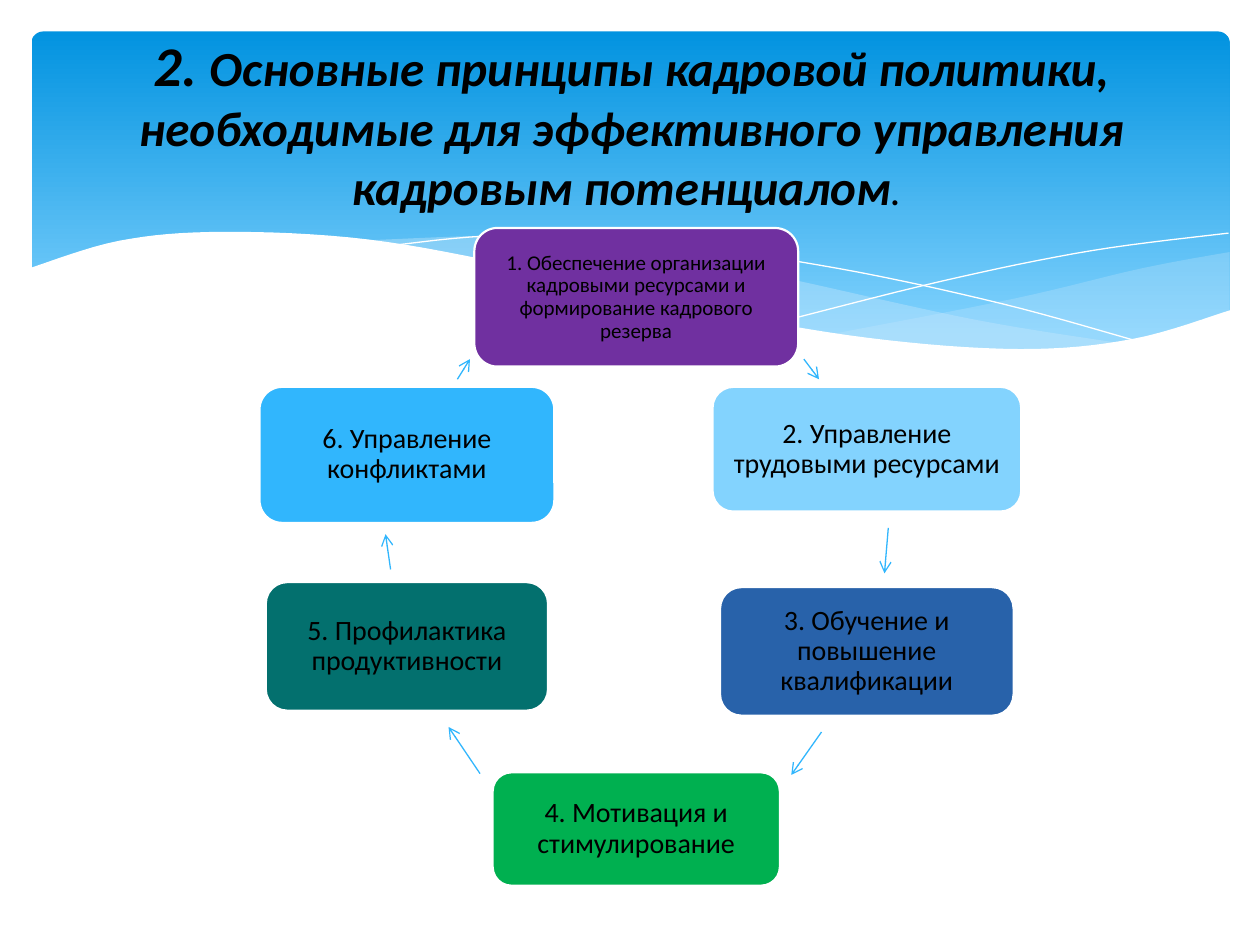
from lxml import etree
from pptx import Presentation
from pptx import util as u
from pptx.dml.color import RGBColor
from pptx.enum import shapes, text
from pptx.oxml.ns import qn

COLORS = {
    "sky_top": "0293E0", "sky_bottom": "83D3FE", "wave": "C6E7FC",
    "white": "FFFFFF", "black": "000000", "arrow": "31B6FD",
    "purple": "7030A0", "light_blue": "83D3FE", "dark_blue": "2862AA",
    "green": "00B050", "teal": "03706E", "blue": "31B6FD",
}
STEPS = 8


def smooth(knots):
    """Return points on a Catmull-Rom curve through the knots."""
    padded = [knots[0], *knots, knots[-1]]
    points = [knots[0]]
    for before, start, end, after in zip(padded, padded[1:], padded[2:], padded[3:]):
        for step in range(1, STEPS + 1):
            t = step / STEPS
            points.append(tuple(
                b + t * (c - a + t * (2 * a - 5 * b + 4 * c - d + t * (3 * b - a - 3 * c + d))) / 2
                for a, b, c, d in zip(before, start, end, after)))
    return points


def add_run(paragraph, words, size, bold=False, italic=False):
    run = paragraph.add_run()
    run.text = words
    run.font.name = "Calibri"
    run.font.size = u.Pt(size)
    run.font.bold = bold
    run.font.italic = italic
    run.font.color.rgb = RGBColor.from_string(COLORS["black"])


presentation = Presentation()
presentation.slide_width = u.Inches(10)
presentation.slide_height = u.Inches(7.5)
slide = presentation.slides.add_slide(presentation.slide_layouts[6])

# Sky panel
sky = slide.shapes.add_shape(
    shapes.MSO_SHAPE.ROUNDED_RECTANGLE,
    u.Inches(0.25), u.Inches(0.25), u.Inches(9.51), u.Inches(2.7))
sky.adjustments[0] = 0.034
sky.shadow.inherit = False
sky.line.fill.background()
sky.fill.gradient()
sky.fill.gradient_angle = 270
for stop, position, color in zip(sky.fill.gradient_stops, (0, 0.9), ("sky_top", "sky_bottom")):
    stop.position = position
    stop.color.rgb = RGBColor.from_string(COLORS[color])

# Waves: fill colour (None for an outline only), opacity in percent, edges as knots
waves = [
    ("wave", 29, [
        [(9.76, 2), (9.06, 2.13), (8.05, 2.37), (6.61, 2.65)],
        [(6.61, 2.65), (7.32, 2.74), (8.14, 2.78), (9.05, 2.69), (9.76, 2.47)]]),
    ("wave", 40, [
        [(8.93, 2.73), (7.75, 2.54), (6.29, 2.22), (5.14, 1.98), (4.2, 1.87), (2.86, 1.91)],
        [(2.86, 1.91), (3.83, 2.07), (5.3, 2.4), (6.65, 2.66), (7.85, 2.78), (8.93, 2.73)]]),
    (None, 100, [
        [(3.09, 1.95), (4.01, 1.87), (5.33, 1.94), (6.65, 2.13), (7.95, 2.41), (9.07, 2.72)]]),
    (None, 100, [[(6.13, 2.57), (7.48, 2.23), (8.66, 1.99), (9.75, 1.85)]]),
    ("white", 100, [
        [(9.77, 2.46), (8.99, 2.69), (8.09, 2.77), (6.88, 2.68), (5.55, 2.45),
         (4.18, 2.13), (2.92, 1.9), (1.77, 1.84), (0.95, 1.91), (0.23, 2.13)],
        [(0.23, 3.29), (9.77, 3.29)]]),
]
for color, opacity, edges in waves:
    corners = [(u.Inches(x), u.Inches(y)) for edge in edges for x, y in smooth(edge)]
    builder = slide.shapes.build_freeform(*corners[0])
    builder.add_line_segments(corners[1:], close=color is not None)
    wave = builder.convert_to_shape()
    wave.shadow.inherit = False
    if color is None:
        wave.fill.background()
        wave.line.color.rgb = RGBColor.from_string(COLORS["white"])
        wave.line.width = u.Pt(0)
        continue
    wave.line.fill.background()
    wave.fill.solid()
    wave.fill.fore_color.rgb = RGBColor.from_string(COLORS[color])
    if opacity < 100:
        fill_color = wave._element.spPr.find(".//" + qn("a:srgbClr"))
        etree.SubElement(fill_color, qn("a:alpha"), val=str(opacity * 1000))

# Cycle of principles: words, colour, column centre, top, width, height, arrow to the next
LEFT, MIDDLE, RIGHT = 3.23, 5.05, 6.88
principles = [
    ("1. Обеспечение организации кадровыми ресурсами и формирование кадрового резерва",
     "purple", MIDDLE, 1.81, 2.57, 1.1, (6.38, 2.85, 6.5, 3.01)),
    ("2. Управление трудовыми ресурсами",
     "light_blue", RIGHT, 3.07, 2.45, 0.99, (7.05, 4.19, 7.02, 4.55)),
    ("3. Обучение и повышение квалификации",
     "dark_blue", RIGHT, 4.66, 2.33, 1.02, (6.52, 5.81, 6.28, 6.15)),
    ("4. Мотивация и стимулирование",
     "green", MIDDLE, 6.13, 2.28, 0.9, (3.81, 6.14, 3.56, 5.77)),
    ("5. Профилактика продуктивности",
     "teal", LEFT, 4.62, 2.24, 1.02, (3.1, 4.52, 3.06, 4.24)),
    ("6. Управление конфликтами",
     "blue", LEFT, 3.07, 2.34, 1.08, (3.63, 3.01, 3.73, 2.85)),
]
for words, color, center, top, width, height, ends in principles:
    shape = slide.shapes.add_shape(
        shapes.MSO_SHAPE.ROUNDED_RECTANGLE,
        u.Inches(center - width / 2), u.Inches(top), u.Inches(width), u.Inches(height))
    shape.shadow.inherit = False
    shape.fill.solid()
    shape.fill.fore_color.rgb = RGBColor.from_string(COLORS[color])
    shape.line.color.rgb = RGBColor.from_string(COLORS["white"])
    shape.line.width = u.Pt(1.25)
    frame = shape.text_frame
    frame.word_wrap = True
    frame.vertical_anchor = text.MSO_ANCHOR.MIDDLE
    frame.margin_left = frame.margin_right = u.Inches(0.06)
    frame.margin_top = frame.margin_bottom = u.Inches(0.06)
    paragraph = frame.paragraphs[0]
    paragraph.alignment = text.PP_ALIGN.CENTER
    paragraph.line_spacing = 0.9
    add_run(paragraph, words, 12 if color == "purple" else 16)

    arrow = slide.shapes.add_connector(
        shapes.MSO_CONNECTOR.STRAIGHT, *[u.Inches(value) for value in ends])
    arrow.line.color.rgb = RGBColor.from_string(COLORS["arrow"])
    arrow.line.width = u.Pt(0.75)
    outline = arrow._element.spPr.find(qn("a:ln"))
    etree.SubElement(outline, qn("a:tailEnd"), type="arrow")
    etree.SubElement(arrow._element.spPr, qn("a:effectLst"))

# Title
title = slide.shapes.add_textbox(u.Inches(0.51), u.Inches(0.29), u.Inches(9), u.Inches(1.37))
title.text_frame.word_wrap = True
title.text_frame.vertical_anchor = text.MSO_ANCHOR.MIDDLE
paragraph = title.text_frame.paragraphs[0]
paragraph.alignment = text.PP_ALIGN.CENTER
add_run(paragraph, "2. ", 32, bold=True, italic=True)
add_run(paragraph, "Основные принципы кадровой политики, необходимые для эффективного "
        "управления кадровым потенциалом", 28, bold=True, italic=True)
add_run(paragraph, ". ", 24, italic=True)

presentation.save("out.pptx")
